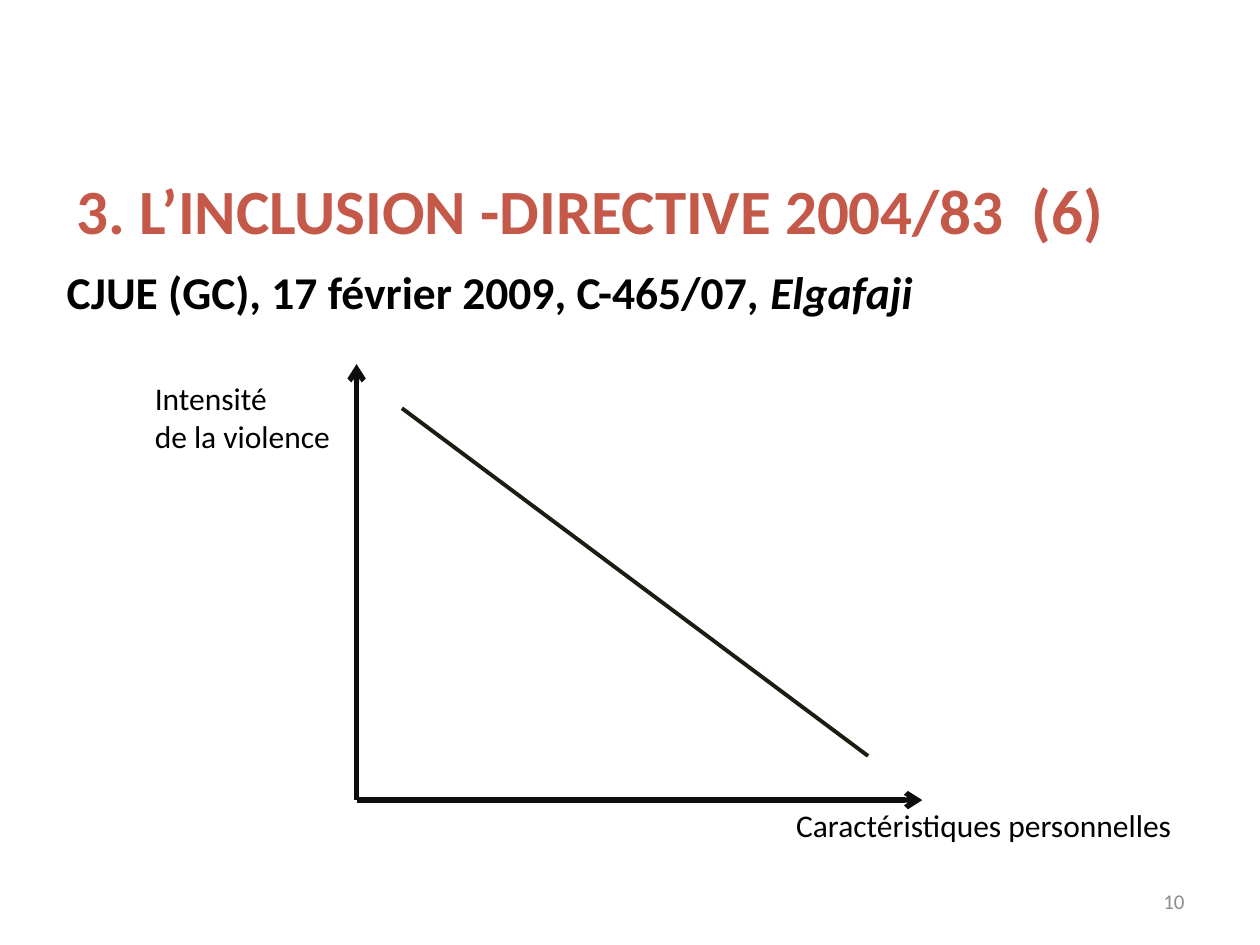
import pptx
import pptx.util
import pptx.dml.color
import pptx.enum.shapes
import pptx.enum.text
import pptx.oxml.ns
from dataclasses import dataclass
from lxml import etree
from pptx.util import Inches


@dataclass(frozen=True)
class Theme:
    font: str = "Calibri"
    title_color: str = "C4594A"
    text_color: str = "000000"
    number_color: str = "8C8C8C"
    axis_color: str = "0D0D0D"
    curve_color: str = "1E1C11"
    title_size: int = 36
    case_size: int = 26
    label_size: int = 18
    number_size: int = 12
    axis_width: float = 3
    curve_width: float = 2.25


THEME = Theme()
ALIGN = pptx.enum.text.PP_ALIGN
ANCHOR = pptx.enum.text.MSO_ANCHOR
FIT = pptx.enum.text.MSO_AUTO_SIZE


def rgb(value):
    return pptx.dml.color.RGBColor.from_string(value)


def format_text(frame, size, color, bold=False, align=ALIGN.LEFT):
    for para in frame.paragraphs:
        para.alignment = align
        for span in para.runs:
            span.font.name = THEME.font
            span.font.size = pptx.util.Pt(size)
            span.font.bold = bold
            span.font.color.rgb = rgb(color)


def set_title(page, text, left, top, width, height):
    title = page.shapes.title
    title.left, title.top = Inches(left), Inches(top)
    title.width, title.height = Inches(width), Inches(height)
    frame = title.text_frame
    frame.text = text
    frame.vertical_anchor = ANCHOR.MIDDLE
    frame.auto_size = FIT.NONE
    format_text(frame, THEME.title_size, THEME.title_color, bold=True)


def add_text(page, text, left, top, width, height, size=THEME.label_size,
             color=THEME.text_color, bold=False):
    box = page.shapes.add_textbox(Inches(left), Inches(top), Inches(width), Inches(height))
    frame = box.text_frame
    frame.word_wrap = False
    frame.auto_size = FIT.SHAPE_TO_FIT_TEXT
    frame.text = text
    format_text(frame, size, color, bold)
    return frame


def add_page_number(page, number, left, top, width, height):
    frame = add_text(page, number, left, top, width, height)
    frame.word_wrap = True
    frame.auto_size = FIT.NONE
    frame.vertical_anchor = ANCHOR.MIDDLE
    format_text(frame, THEME.number_size, THEME.number_color, align=ALIGN.RIGHT)


def add_line(page, start, end, color, width, arrow=False):
    line = page.shapes.add_connector(
        pptx.enum.shapes.MSO_CONNECTOR.STRAIGHT,
        *(Inches(value) for value in (*start, *end)))
    line.line.color.rgb = rgb(color)
    line.line.width = pptx.util.Pt(width)
    if arrow:
        etree.SubElement(line.line._get_or_add_ln(),
                         pptx.oxml.ns.qn("a:tailEnd"), type="arrow")
    etree.SubElement(line._element.spPr, pptx.oxml.ns.qn("a:effectLst"))


def main():
    deck = pptx.Presentation()
    deck.slide_width, deck.slide_height = Inches(10), Inches(7.5)
    page = deck.slides.add_slide(deck.slide_layouts.get_by_name("Title Only"))

    # Heading and page number
    set_title(page, "3. L’INCLUSION -DIRECTIVE 2004/83  (6)", 0.51, 1.39, 9, 0.55)
    add_page_number(page, "10", 7.17, 6.95, 2.33, 0.4)

    # Sliding scale between violence and personal features
    origin = (2.83, 6.35)
    add_line(page, (3.19, 3.24), (6.89, 6), THEME.curve_color, THEME.curve_width)
    for axis_end in ((origin[0], 2.89), (7.32, origin[1])):
        add_line(page, origin, axis_end, THEME.axis_color, THEME.axis_width, arrow=True)

    # Axis labels
    add_text(page, "Intensité\nde la violence", 1.13, 2.96, 1.61, 1.01)
    add_text(page, "Caractéristiques personnelles", 6.22, origin[1], 3.21, 0.71)

    # Case reference, with the party's name in italics
    case = add_text(page, "CJUE (GC), 17 février 2009, C-465/07, ", 0.43, 2.05, 6.99, 0.84,
                    THEME.case_size, bold=True)
    party = case.paragraphs[0].add_run()
    party.text = "Elgafaji"
    format_text(case, THEME.case_size, THEME.text_color, bold=True)
    party.font.italic = True

    deck.save("out.pptx")


if __name__ == "__main__":
    main()
